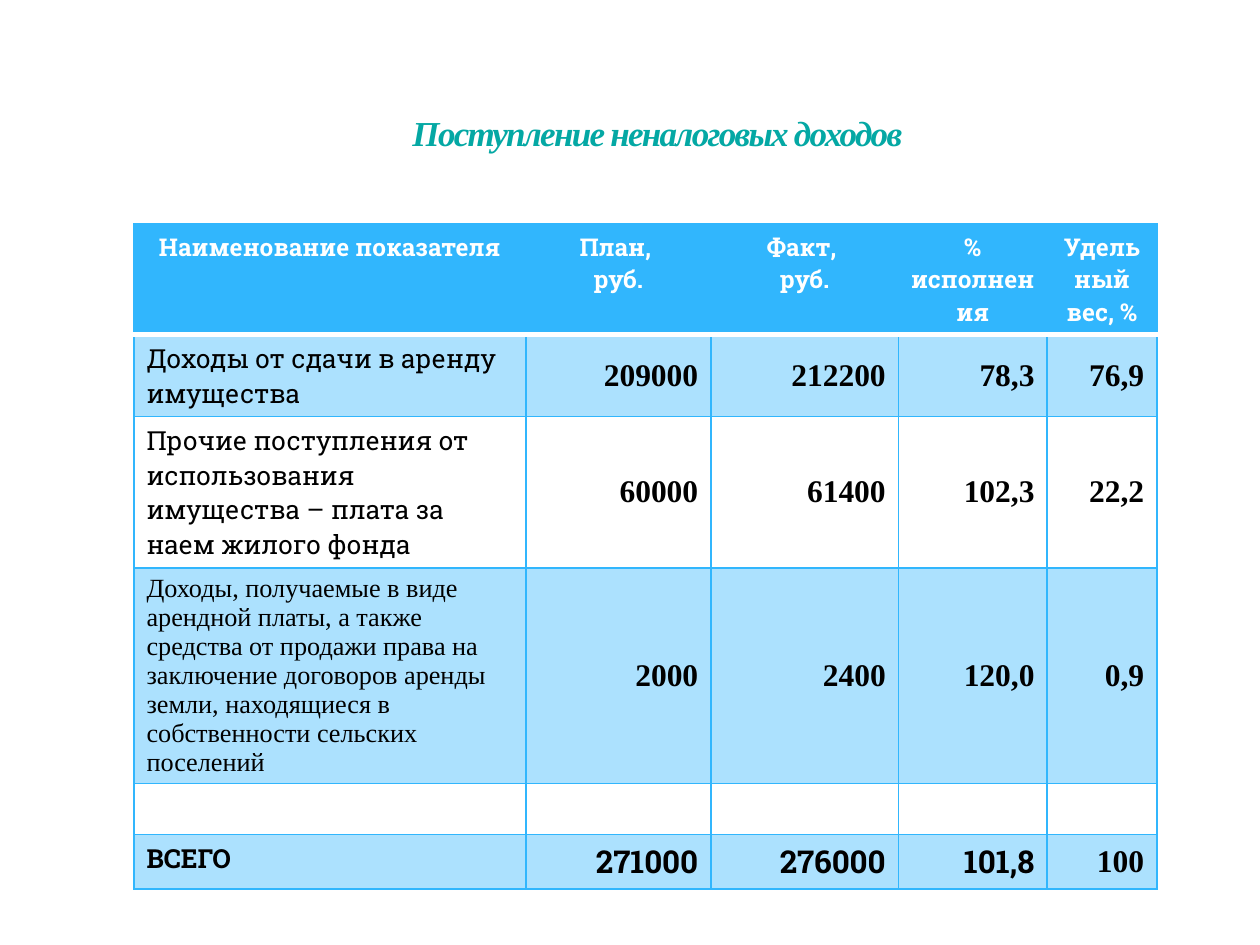
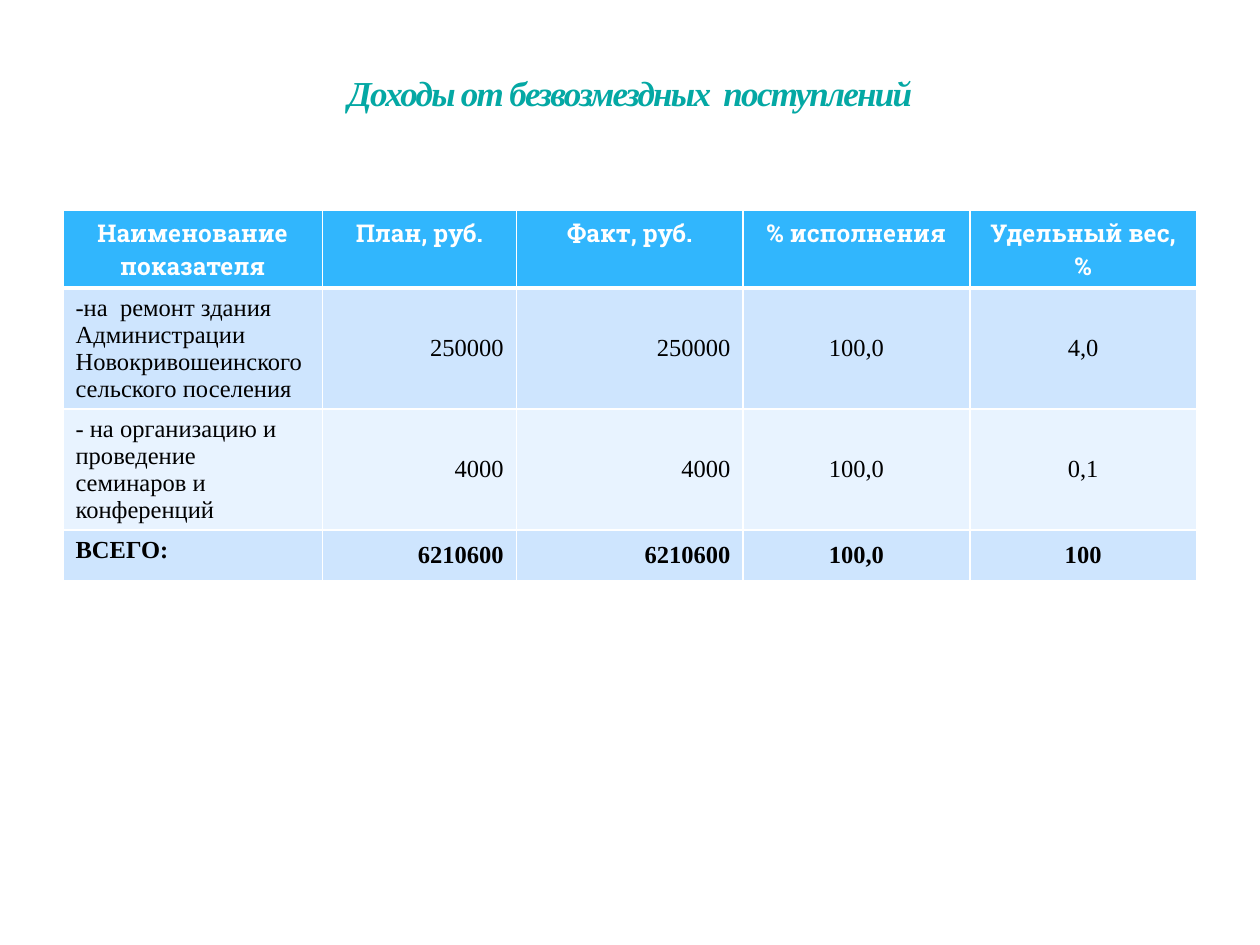
from dataclasses import dataclass

from lxml.etree import SubElement
from pptx import Presentation
from pptx.dml.color import RGBColor
from pptx.enum.text import MSO_ANCHOR as Anchor, MSO_AUTO_SIZE as AutoSize, PP_ALIGN as Align
from pptx.oxml.ns import qn
from pptx.util import Cm, Pt


@dataclass(frozen=True)
class Theme:
    teal: str = "04A8A4"
    outline: str = "AFCCDE"
    blue: str = "31B6FD"
    pale: str = "CEE5FE"
    paler: str = "E8F3FF"
    white: str = "FFFFFF"
    black: str = "000000"
    slab: str = "Roboto Slab"
    serif: str = "Times New Roman"
    title_size: int = 20
    header_size: int = 14
    label_size: int = 15
    figure_size: int = 18
    thin: int = 1
    thick: int = 3


THEME = Theme()


def text_format(name, size, bold=False, italic=False, color=THEME.black):
    return {"name": name, "size": Pt(size), "bold": bold, "italic": italic, "color": color}


TITLE = text_format(THEME.serif, THEME.title_size, True, True, THEME.teal)
HEADER = text_format(THEME.slab, THEME.header_size, True, color=THEME.white)
SLAB_LABEL = text_format(THEME.slab, THEME.label_size)
SERIF_LABEL = text_format(THEME.serif, THEME.label_size)
TOTAL_LABEL = text_format(THEME.slab, THEME.label_size, True)
FIGURE = text_format(THEME.serif, THEME.figure_size, True)
TOTAL_FIGURE = text_format(THEME.slab, THEME.figure_size, True)
SMALL = text_format(THEME.serif, THEME.header_size)
SMALL_BOLD = text_format(THEME.serif, THEME.header_size, True)


def format_span(span, style):
    for key, value in style.items():
        if key == "color":
            span.font.color.rgb = RGBColor.from_string(value)
        else:
            setattr(span.font, key, value)


def write(frame, text, style, align):
    for index, line in enumerate(text.split("\n")):
        para = frame.paragraphs[0] if index == 0 else frame.add_paragraph()
        para.alignment = align
        span = para.add_run()
        span.text = line
        format_span(span, style)


def add_solid(parent, color, alpha=None):
    solid = SubElement(parent, qn("a:solidFill"))
    tone = SubElement(solid, qn("a:srgbClr"), val=color)
    if alpha:
        SubElement(tone, qn("a:alpha"), val=str(alpha * 1000))


def add_title(page, text, box):
    title = page.shapes.title
    title.left, title.top, title.width, title.height = map(Cm, box)
    frame = title.text_frame
    for key, value in {"vertical_anchor": Anchor.MIDDLE, "word_wrap": True,
                       "auto_size": AutoSize.NONE}.items():
        setattr(frame, key, value)
    write(frame, text, TITLE, Align.CENTER)
    props = frame.paragraphs[0].runs[0].font._element
    props.set("spc", "-100")
    line = SubElement(props, qn("a:ln"), w=str(Pt(0.25)))
    add_solid(line, THEME.outline, 25)
    props.insert(0, line)


def paint_cell(cell, row, border, fill):
    """Edges come first, as the schema puts them before the fill."""
    props = cell._tc.get_or_add_tcPr()
    for edge in "LRTB":
        under_header = (row, edge) in ((0, "B"), (1, "T"))
        color, width = (THEME.white, THEME.thick) if under_header else (border, THEME.thin)
        add_solid(SubElement(props, qn(f"a:ln{edge}"), w=str(Pt(width))), color)
    if fill:
        add_solid(props, *fill)
    else:
        cell.fill.background()


def add_income_table(page, corner, widths, rows, aligns, border, bands):
    """Each row is (height, label format, figure formats, texts)."""
    left, top = map(Cm, corner)
    heights = [row[0] for row in rows]
    table = page.shapes.add_table(len(rows), len(widths), left, top,
                                  Cm(sum(widths)), Cm(sum(heights))).table
    table.horz_banding = False
    for column, width in zip(table.columns, widths):
        column.width = Cm(width)
    for r, (height, label, figure, texts) in enumerate(rows):
        table.rows[r].height = Cm(height)
        fill = bands[(r - 1) % 2] if r else (THEME.blue,)
        for c, text in enumerate(texts):
            cell = table.cell(r, c)
            paint_cell(cell, r, border, fill)
            if r and c:
                cell.vertical_anchor = Anchor.MIDDLE
            if text:
                style = label if c == 0 else figure
                if text == "100":
                    style = {**figure, "name": THEME.serif}
                write(cell.text_frame, text, style, aligns[c] if r else Align.CENTER)


def add_page(deck, title, title_box, **table):
    page = deck.slides.add_slide(deck.slide_layouts[5])
    add_title(page, title, title_box)
    add_income_table(page, **table)


def main():
    deck = Presentation()
    deck.slide_width, deck.slide_height = Cm(25.4), Cm(19.05)
    add_page(
        deck, "Поступление неналоговых доходов", (3.5, 1.73, 19.5, 1.88),
        corner=(2.7, 4.52), widths=(7.9, 3.73, 3.78, 3, 2.21),
        aligns=[Align.LEFT] + [Align.RIGHT] * 4,
        border=THEME.blue, bands=((THEME.blue, 40), None),
        rows=[
            (2.2, HEADER, HEADER, ("Наименование показателя", "План, \nруб.", "Факт, \nруб.",
                                   "% исполнения", "Удельный вес, %")),
            (1.65, SLAB_LABEL, FIGURE, ("Доходы от сдачи в аренду имущества",
                                        "209000", "212200", "78,3", "76,9")),
            (3.05, SLAB_LABEL, FIGURE, (
                "Прочие поступления от использования имущества – плата за наем жилого фонда",
                "60000", "61400", "102,3", "22,2")),
            (4.33, SERIF_LABEL, FIGURE, (
                "Доходы, получаемые в виде арендной платы, а также средства от продажи права "
                "на заключение договоров аренды земли, находящиеся в собственности "
                "сельских поселений", "2000", "2400", "120,0", "0,9")),
            (1.03, SLAB_LABEL, FIGURE, ("",) * 5),
            (1.1, TOTAL_LABEL, TOTAL_FIGURE, ("ВСЕГО", "271000", "276000", "101,8", "100")),
        ])
    add_page(
        deck, "Доходы от безвозмездных  поступлений", (2.9, 0, 19.6, 3.73),
        corner=(1.27, 4.24), widths=(5.23, 3.91, 4.57, 4.57, 4.57),
        aligns=[Align.LEFT] + [Align.RIGHT] * 2 + [Align.CENTER] * 2,
        border=THEME.white, bands=((THEME.pale,), (THEME.paler,)),
        rows=[
            (1.55, HEADER, HEADER, ("Наименование показателя", "План, руб.", "Факт, руб.",
                                    "% исполнения", "Удельный вес, %")),
            (2.44, SMALL, SMALL, (
                "-на  ремонт здания Администрации Новокривошеинского сельского поселения",
                "250000", "250000", "100,0", "4,0")),
            (2.44, SMALL, SMALL, ("- на организацию и проведение семинаров и конференций",
                                  "4000", "4000", "100,0", "0,1")),
            (1.03, SMALL_BOLD, SMALL_BOLD, ("ВСЕГО:", "6210600", "6210600", "100,0", "100")),
        ])
    deck.save("out.pptx")


if __name__ == "__main__":
    main()
